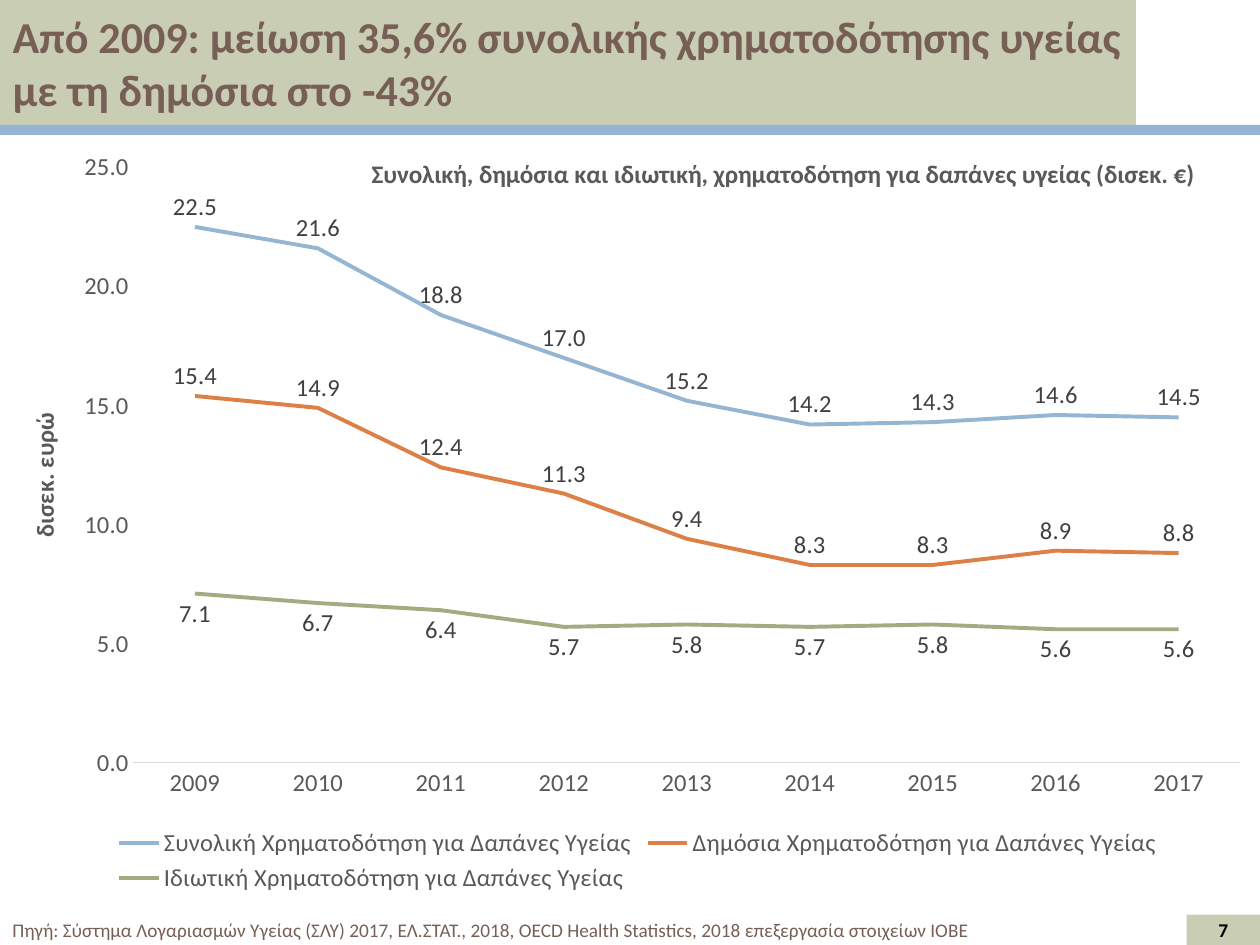
"""Build a slide with a line chart of health care financing, 2009-2017."""
from lxml import etree
from pptx import Presentation
from pptx.chart.data import CategoryChartData
from pptx.dml.color import RGBColor
from pptx.enum.chart import XL_CHART_TYPE, XL_LABEL_POSITION, XL_LEGEND_POSITION, XL_TICK_MARK
from pptx.enum.shapes import MSO_SHAPE
from pptx.enum.text import MSO_ANCHOR, MSO_AUTO_SIZE, PP_ALIGN
from pptx.oxml import parse_xml
from pptx.oxml.ns import nsdecls, qn
from pptx.util import Cm, Pt

SAGE = RGBColor(0xC9, 0xCD, 0xB3)
BLUE = RGBColor(0x94, 0xB6, 0xD2)
ORANGE = RGBColor(0xDD, 0x80, 0x47)
OLIVE = RGBColor(0xA5, 0xAB, 0x81)
BROWN = RGBColor(0x77, 0x5F, 0x55)
BLACK = RGBColor(0, 0, 0)
GREY = RGBColor(0x59, 0x59, 0x59)
DARK = RGBColor(0x40, 0x40, 0x40)
PALE = RGBColor(0xD9, 0xD9, 0xD9)

ABOVE, BELOW = XL_LABEL_POSITION.ABOVE, XL_LABEL_POSITION.BELOW
SERIES = [
    ("Συνολική Χρηματοδότηση για Δαπάνες Υγείας", BLUE, ABOVE,
     (22.5, 21.6, 18.8, 17.0, 15.2, 14.2, 14.3, 14.6, 14.5)),
    ("Δημόσια Χρηματοδότηση για Δαπάνες Υγείας", ORANGE, ABOVE,
     (15.4, 14.9, 12.4, 11.3, 9.4, 8.3, 8.3, 8.9, 8.8)),
    ("Ιδιωτική Χρηματοδότηση για Δαπάνες Υγείας", OLIVE, BELOW,
     (7.1, 6.7, 6.4, 5.7, 5.8, 5.7, 5.8, 5.6, 5.6)),
]


def set_font(font, size, color, bold=False):
    font.name = "Calibri"
    font.size = Pt(size)
    font.bold = bold
    font.color.rgb = color


def set_layout(parent, index, **values):
    for old in parent.findall(qn("c:layout")):
        parent.remove(old)
    layout = parse_xml(f"<c:layout {nsdecls('c')}><c:manualLayout/></c:layout>")
    for tag, val in values.items():
        etree.SubElement(layout[0], qn(f"c:{tag}")).set("val", str(val))
    parent.insert(index, layout)


prs = Presentation()
prs.slide_width, prs.slide_height = Cm(25.4), Cm(19.05)
s = prs.slides.add_slide(prs.slide_layouts[5])

title = s.shapes.title
title.left, title.top, title.width, title.height = Cm(0), Cm(0), Cm(22.9), Cm(2.52)
title.fill.solid()
title.fill.fore_color.rgb = SAGE
tf = title.text_frame
tf.text = "Από 2009: μείωση 35,6% συνολικής χρηματοδότησης υγείας με τη δημόσια στο -43%"
tf.auto_size = MSO_AUTO_SIZE.NONE
tf.vertical_anchor = MSO_ANCHOR.MIDDLE
p = tf.paragraphs[0]
p.alignment = PP_ALIGN.LEFT
set_font(p.font, 25.2, BROWN, True)

for x, y, w, h, color in ((0, 2.52, 25.4, 0.2, BLUE), (23.92, 18.44, 1.48, 0.61, SAGE)):
    sp = s.shapes.add_shape(MSO_SHAPE.RECTANGLE, Cm(x), Cm(y), Cm(w), Cm(h))
    sp.shadow.inherit = False
    sp.fill.solid()
    sp.fill.fore_color.rgb = color
    sp.line.fill.background()

source = ("Πηγή: Σύστημα Λογαριασμών Υγείας (ΣΛΥ) 2017, ΕΛ.ΣΤΑΤ., 2018, "
          "OECD Health Statistics, 2018 επεξεργασία στοιχείων ΙΟΒΕ")
for text, x, w, h, size, color, bold, align, anchor in (
    (source, 0, 20.9, 0.74, 11, BROWN, False, PP_ALIGN.JUSTIFY, MSO_ANCHOR.TOP),
    ("7", 23.92, 1.48, 0.69, 11.1, BLACK, True, PP_ALIGN.CENTER, MSO_ANCHOR.MIDDLE),
):
    tf = s.shapes.add_textbox(Cm(x), Cm(18.39), Cm(w), Cm(h)).text_frame
    tf.word_wrap = True
    tf.vertical_anchor = anchor
    p = tf.paragraphs[0]
    p.text = text
    p.alignment = align
    set_font(p.font, size, color, bold)

data = CategoryChartData(number_format="#,##0.0")
data.categories = [str(year) for year in range(2009, 2018)]
for name, color, pos, values in SERIES:
    data.add_series(name, values)
chart = s.shapes.add_chart(XL_CHART_TYPE.LINE, Cm(0.46), Cm(2.92), Cm(24.79), Cm(15.19), data).chart
set_font(chart.font, 14, BLACK)

chart.has_title = True
p = chart.chart_title.text_frame.paragraphs[0]
p.text = "Συνολική, δημόσια και ιδιωτική, χρηματοδότηση για δαπάνες υγείας (δισεκ. €)"
set_font(p.font, 14.4, GREY, True)
chart.chart_title.include_in_layout = False
set_layout(chart.chart_title._element, 1, xMode="edge", yMode="edge", x=0.28, y=0.01)

chart.has_legend = True
chart.legend.position = XL_LEGEND_POSITION.BOTTOM
chart.legend.include_in_layout = False
set_font(chart.legend.font, 14, GREY)

cat, val = chart.category_axis, chart.value_axis
for axis in (cat, val):
    axis.has_major_gridlines = False
    axis.major_tick_mark = axis.minor_tick_mark = XL_TICK_MARK.NONE
    set_font(axis.tick_labels.font, 14, GREY)
cat.format.line.color.rgb = PALE
cat.format.line.width = Pt(0.75)
val.format.line.fill.background()
val.minimum_scale, val.maximum_scale, val.major_unit = 0, 25, 5
val.tick_labels.number_format = "#,##0.0"
val.tick_labels.number_format_is_linked = False
p = val.axis_title.text_frame.paragraphs[0]
p.text = "δισεκ. ευρώ"
set_font(p.font, 14, GREY, True)

plot = chart.plots[0]
plot.vary_by_categories = False
set_layout(chart._chartSpace.chart.plotArea, 0, layoutTarget="inner", xMode="edge",
           yMode="edge", x=0.09, y=0.03, w=0.9, h=0.79)
for ser, (name, color, pos, values) in zip(plot.series, SERIES):
    ser.smooth = False
    ser.format.line.color.rgb = color
    ser.format.line.width = Pt(2.25)
    labels = ser.data_labels
    labels.show_value = True
    labels.position = pos
    labels.number_format = "#,##0.0"
    labels.number_format_is_linked = False
    set_font(labels.font, 14, DARK)

prs.save("out.pptx")
